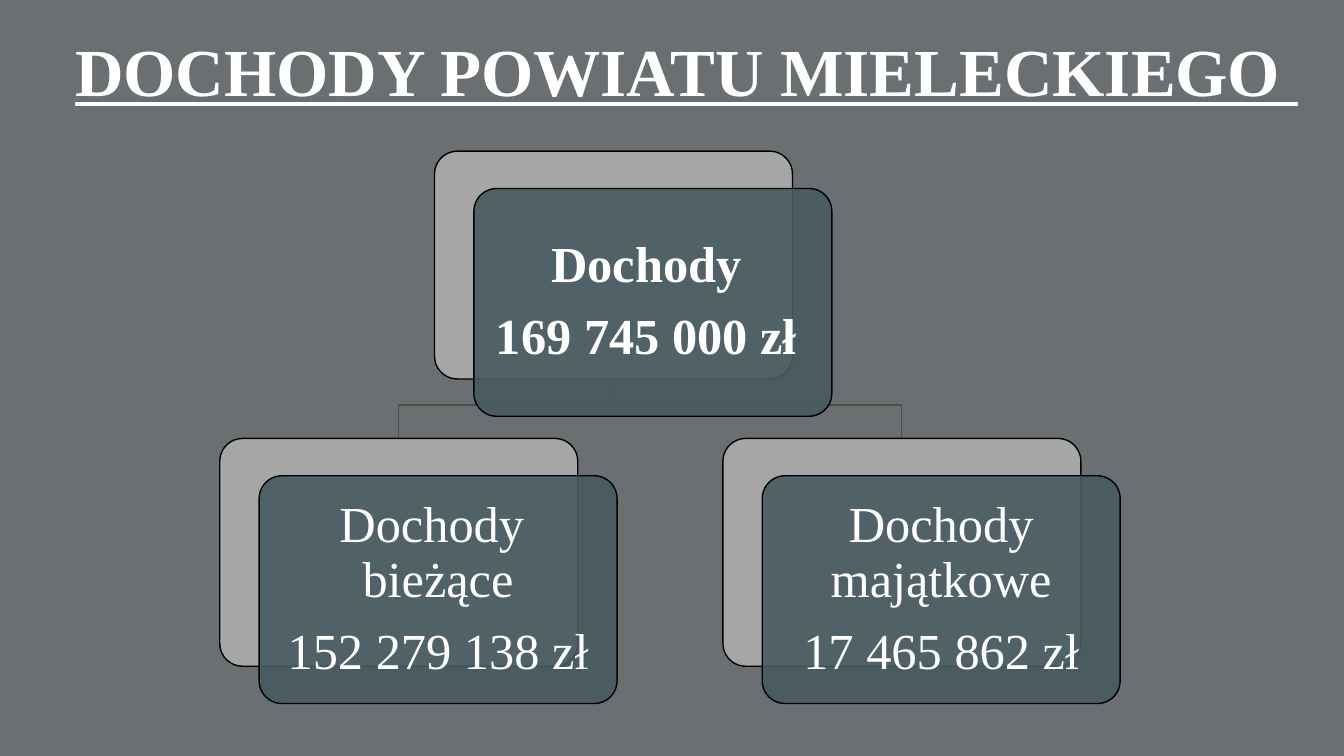
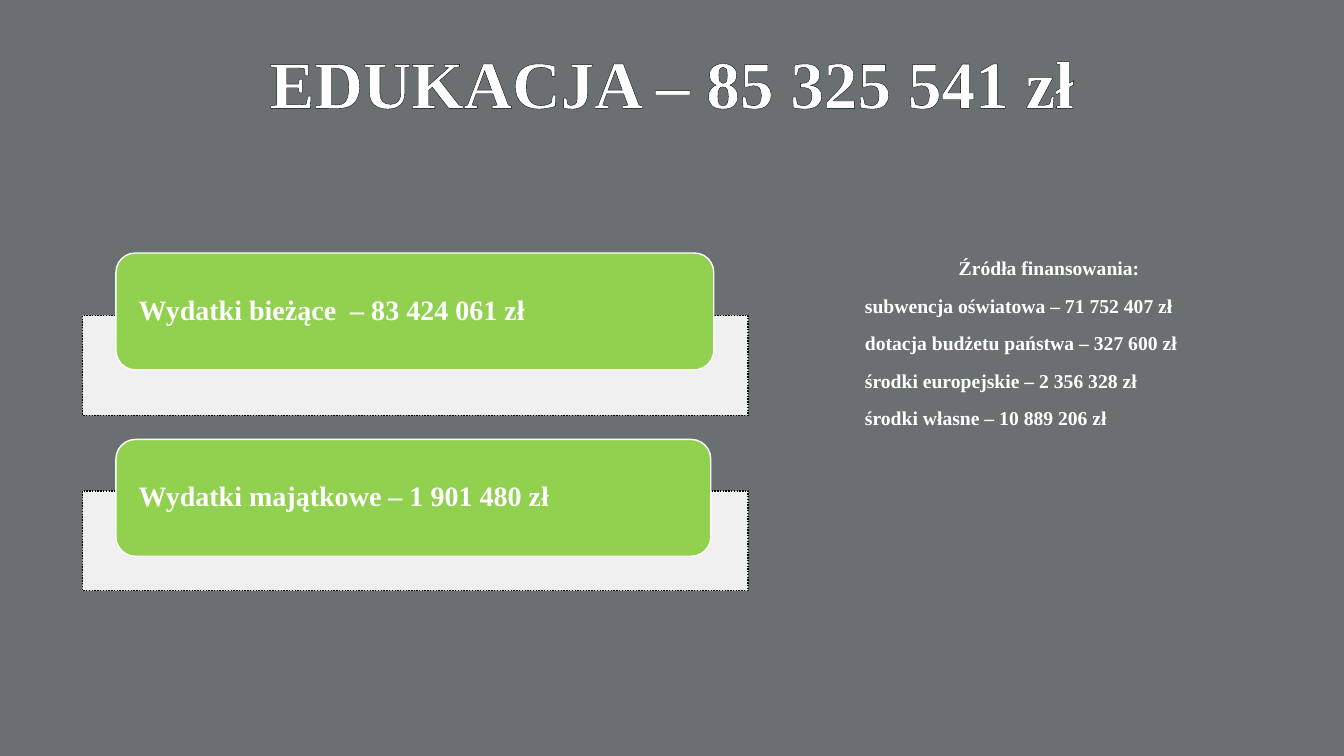
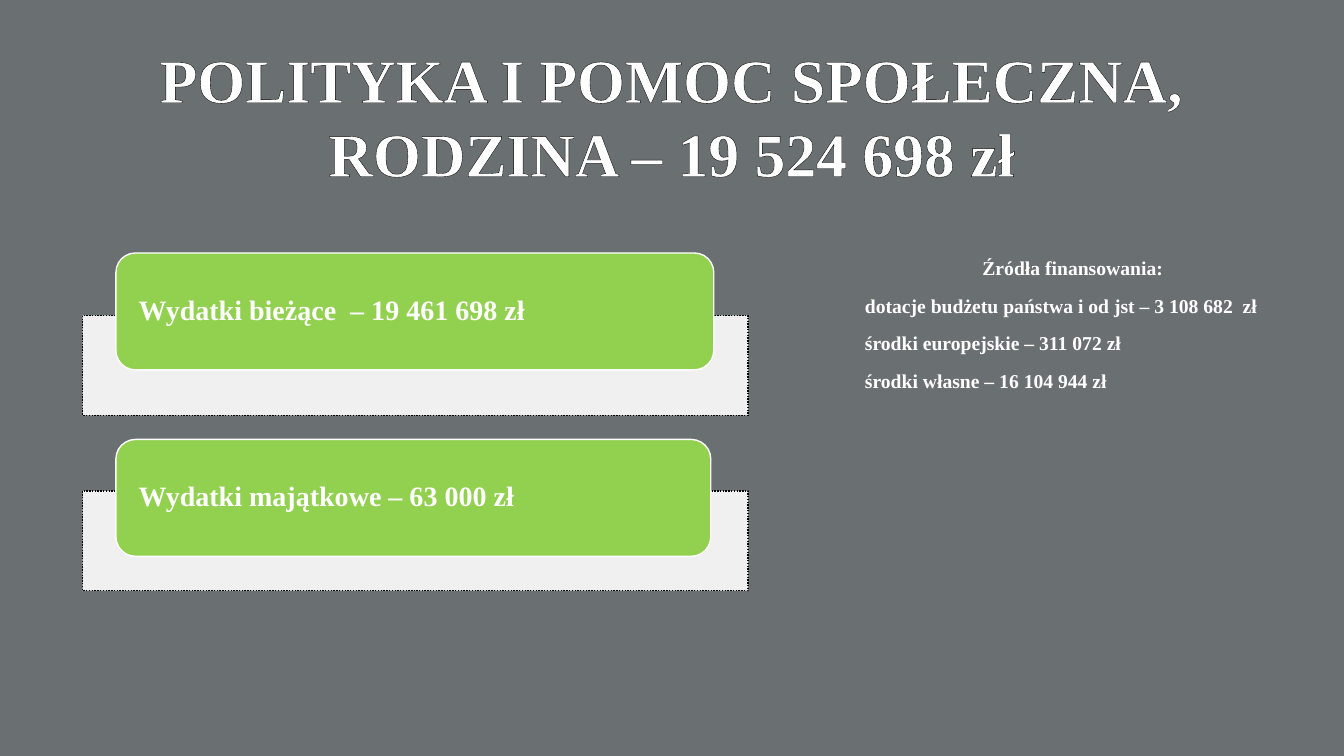
"""Build three slides on the county budget: income, education, social policy."""
from lxml import etree
from pptx import Presentation
from pptx.dml.color import RGBColor
from pptx.enum.dml import MSO_LINE
from pptx.enum.shapes import MSO_SHAPE
from pptx.enum.text import MSO_ANCHOR, PP_ALIGN
from pptx.oxml.ns import qn
from pptx.util import Inches, Pt

ROUND, RECT = MSO_SHAPE.ROUNDED_RECTANGLE, MSO_SHAPE.RECTANGLE
LEFT, CENTER = PP_ALIGN.LEFT, PP_ALIGN.CENTER
TOP, MIDDLE = MSO_ANCHOR.TOP, MSO_ANCHOR.MIDDLE
DOTTED = MSO_LINE.ROUND_DOT

FONT = "Times New Roman"
BACKGROUND, WHITE, BLACK = "6A6F71", "FFFFFF", "000000"
GREY, SLATE, GREEN, BROWN = "A6A6A6", "475B61", "92D050", "524C44"


def paint(fill, color, alpha=100):
    """Give a fill a solid colour, with an opacity in percent."""
    fill.solid()
    fill.fore_color.rgb = RGBColor.from_string(color)
    if alpha < 100:
        clr = fill._xPr.find(qn("a:solidFill"))[0]
        etree.SubElement(clr, qn("a:alpha"), val=str(alpha * 1000))


def write(shape, lines, size, bold=True, underline=None, outline=False,
          aligns=(CENTER,), anchor=TOP, margins=(0.1, 0.05), **spacing):
    """Fill a shape with paragraphs; the last alignment serves the rest."""
    tf = shape.text_frame
    tf.word_wrap, tf.vertical_anchor = True, anchor
    tf.margin_left = tf.margin_right = Inches(margins[0])
    tf.margin_top = tf.margin_bottom = Inches(margins[1])
    font = {"name": FONT, "size": Pt(size), "bold": bold, "underline": underline}
    for i, line in enumerate(lines):
        p = tf.paragraphs[0] if i == 0 else tf.add_paragraph()
        p.text = line
        p.alignment = aligns[min(i, len(aligns) - 1)]
        for name, value in spacing.items():
            setattr(p, name, value)
        for r in p.runs:
            for name, value in font.items():
                setattr(r.font, name, value)
            paint(r.font.fill, WHITE)
            if outline:
                ln = etree.Element(qn("a:ln"), w=str(Pt(1)))
                fill = etree.SubElement(ln, qn("a:solidFill"))
                etree.SubElement(fill, qn("a:srgbClr"), val=BLACK)
                r.font._element.insert(0, ln)


prs = Presentation()
prs.slide_width, prs.slide_height = Inches(13.33), Inches(7.5)

titles = [
    ("DOCHODY POWIATU MIELECKIEGO ", (0.47, 0.24, 12.68, 1.06), 48),
    ("EDUKACJA – 85 325 541 zł", (0.4, 0.36, 12.53, 0.96), 48),
    ("POLITYKA I POMOC SPOŁECZNA, RODZINA – 19 524 698 zł",
     (0.4, 0.36, 12.53, 0.96), 44),
]
slides = []
for number, (title, box, size) in enumerate(titles):
    s = prs.slides.add_slide(prs.slide_layouts[6])
    paint(s.background.fill, BACKGROUND)
    write(s.shapes.add_textbox(*map(Inches, box)), [title], size,
          underline=number == 0, outline=number > 0, space_before=Pt(10))
    slides.append(s)

income, *spending = slides
CARD_W, CARD_H = 3.55, 2.26
cards = [
    (4.31, 1.5, True, ["Dochody ", "169 745 000 zł "]),
    (2.18, 4.35, False, ["Dochody \vbieżące", "152 279 138 zł"]),
    (7.17, 4.35, False, ["Dochody majątkowe", "17 465 862 zł"]),
]
root_x, root_y = cards[0][0] + CARD_W / 2, cards[0][1] + CARD_H
for x, y, *_ in cards[1:]:
    child_x = x + CARD_W / 2
    branch = income.shapes.build_freeform(Inches(root_x), Inches(root_y))
    corners = [(root_x, 4.02), (child_x, 4.02), (child_x, y)]
    branch.add_line_segments([(Inches(a), Inches(b)) for a, b in corners], close=False)
    sp = branch.convert_to_shape()
    sp.shadow.inherit = False
    sp.fill.background()
    paint(sp.line.fill, BROWN)
    sp.line.width = Pt(1)

for x, y, bold, lines in cards:
    for shift_x, shift_y, color, alpha in [(0, 0, GREY, 100), (0.39, 0.37, SLATE, 90)]:
        sp = income.shapes.add_shape(ROUND, Inches(x + shift_x), Inches(y + shift_y),
                                     Inches(CARD_W), Inches(CARD_H))
        sp.adjustments[0] = 0.1
        sp.shadow.inherit = False
        paint(sp.fill, color, alpha)
        paint(sp.line.fill, BLACK)
        sp.line.width = Pt(1)
    write(sp, lines, 36, bold=bold, anchor=MIDDLE, margins=(0.15, 0.15),
          line_spacing=0.9, space_after=Pt(12.6))

details = [
    (["Wydatki bieżące  – 83 424 061 zł", "Wydatki majątkowe – 1 901 480 zł"], 3.9,
     ["Źródła finansowania: ", "subwencja oświatowa – 71 752 407 zł",
      "dotacja budżetu państwa – 327 600 zł", "środki europejskie – 2 356 328 zł",
      "środki własne – 10 889 206 zł"]),
    (["Wydatki bieżące  – 19 461 698 zł", "Wydatki majątkowe – 63 000 zł"], 4.37,
     ["Źródła finansowania: ", "dotacje budżetu państwa i od jst – 3 108 682  zł",
      "środki europejskie – 311 072 zł", "środki własne – 16 104 944 zł"]),
]
rows = [(3.13, 2.51, 5.93), (4.87, 4.36, 5.9)]
for s, (labels, sources_w, sources) in zip(spending, details):
    for label, (panel_y, bar_y, bar_w) in zip(labels, rows):
        parts = [
            (RECT, (0.82, panel_y, 6.6, 0.99), WHITE, 90, BLACK, DOTTED),
            (ROUND, (1.15, bar_y, bar_w, 1.16), GREEN, 100, WHITE, None),
        ]
        for kind, box, color, alpha, edge, dash in parts:
            sp = s.shapes.add_shape(kind, *map(Inches, box))
            sp.shadow.inherit = False
            paint(sp.fill, color, alpha)
            paint(sp.line.fill, edge)
            sp.line.width, sp.line.dash_style = Pt(1), dash
        write(sp, [label], 20, aligns=(LEFT,), anchor=MIDDLE, margins=(0.17, 0),
              line_spacing=0.9, space_after=Pt(7))
    tb = s.shapes.add_textbox(Inches(8.48), Inches(2.49), Inches(sources_w), Inches(0.96))
    write(tb, sources, 14, aligns=(CENTER, LEFT), space_before=Pt(10))

prs.save("out.pptx")
